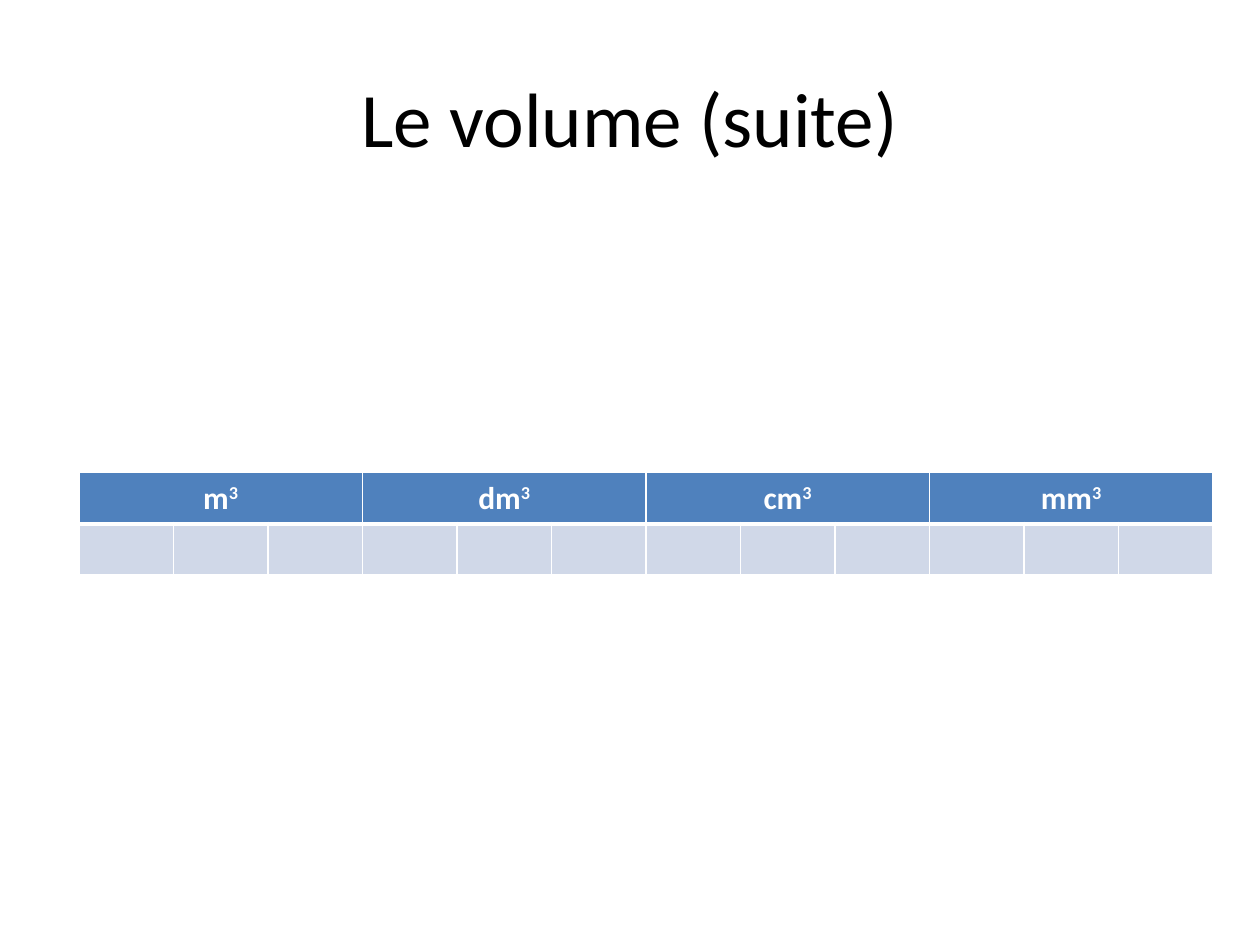
from lxml import etree
from pptx import Presentation
from pptx.dml.color import RGBColor
from pptx.enum.text import MSO_ANCHOR, PP_ALIGN
from pptx.oxml.ns import qn
from pptx.util import Cm, Pt

CENTER = PP_ALIGN.CENTER
MIDDLE = MSO_ANCHOR.MIDDLE
TITLE_ONLY = 5
COLORS = {"text": "000000", "white": "FFFFFF", "header": "4F81BD", "body": "D0D8E8"}
UNITS = ["m", "dm", "cm", "mm"]
DIGITS = 3


def add_run(p, text, size=18, color="text", bold=False, baseline=None):
    r = p.add_run()
    r.text = text
    r.font.name = "Calibri"
    r.font.size = Pt(size)
    r.font.bold = bold
    r.font.color.rgb = RGBColor.from_string(COLORS[color])
    if baseline:
        r.font._element.set("baseline", str(baseline * 1000))
    p.alignment = CENTER


class SlideBuilder:
    def __init__(self, prs):
        self.s = prs.slides.add_slide(prs.slide_layouts[TITLE_ONLY])

    def title(self, text, left, top, width, height):
        sp = self.s.shapes.title
        sp.left, sp.top, sp.width, sp.height = Cm(left), Cm(top), Cm(width), Cm(height)
        tf = sp.text_frame
        tf.vertical_anchor = MIDDLE
        add_run(tf.paragraphs[0], text, size=44)

    def style_cell(self, cell, fill, top=1, bottom=1):
        tc_pr = cell._tc.get_or_add_tcPr()
        for side, width in (("L", 1), ("R", 1), ("T", top), ("B", bottom)):
            ln = etree.SubElement(tc_pr, qn(f"a:ln{side}"), w=str(Pt(width)))
            solid = etree.SubElement(ln, qn("a:solidFill"))
            etree.SubElement(solid, qn("a:srgbClr"), val=COLORS["white"])
        cell.fill.solid()
        cell.fill.fore_color.rgb = RGBColor.from_string(COLORS[fill])

    def unit_table(self, units, left, top, width, height):
        count = len(units) * DIGITS
        frame = self.s.shapes.add_table(2, count, Cm(left), Cm(top), Cm(width), Cm(height))
        table = frame.table
        for col in range(count):
            self.style_cell(table.cell(0, col), "header", bottom=3)
            self.style_cell(table.cell(1, col), "body", top=3)
        for i, unit in enumerate(units):
            cell = table.cell(0, i * DIGITS)
            cell.merge(table.cell(0, (i + 1) * DIGITS - 1))
            p = cell.text_frame.paragraphs[0]
            add_run(p, unit, color="white", bold=True)
            add_run(p, "3", color="white", bold=True, baseline=30)


def main():
    prs = Presentation()
    prs.slide_width, prs.slide_height = Cm(25.4), Cm(19.05)
    builder = SlideBuilder(prs)
    builder.title("Le volume (suite)", 1.27, 0.76, 22.86, 3.18)
    builder.unit_table(UNITS, 1.59, 9.53, 22.86, 2.06)
    prs.save("out.pptx")


if __name__ == "__main__":
    main()
